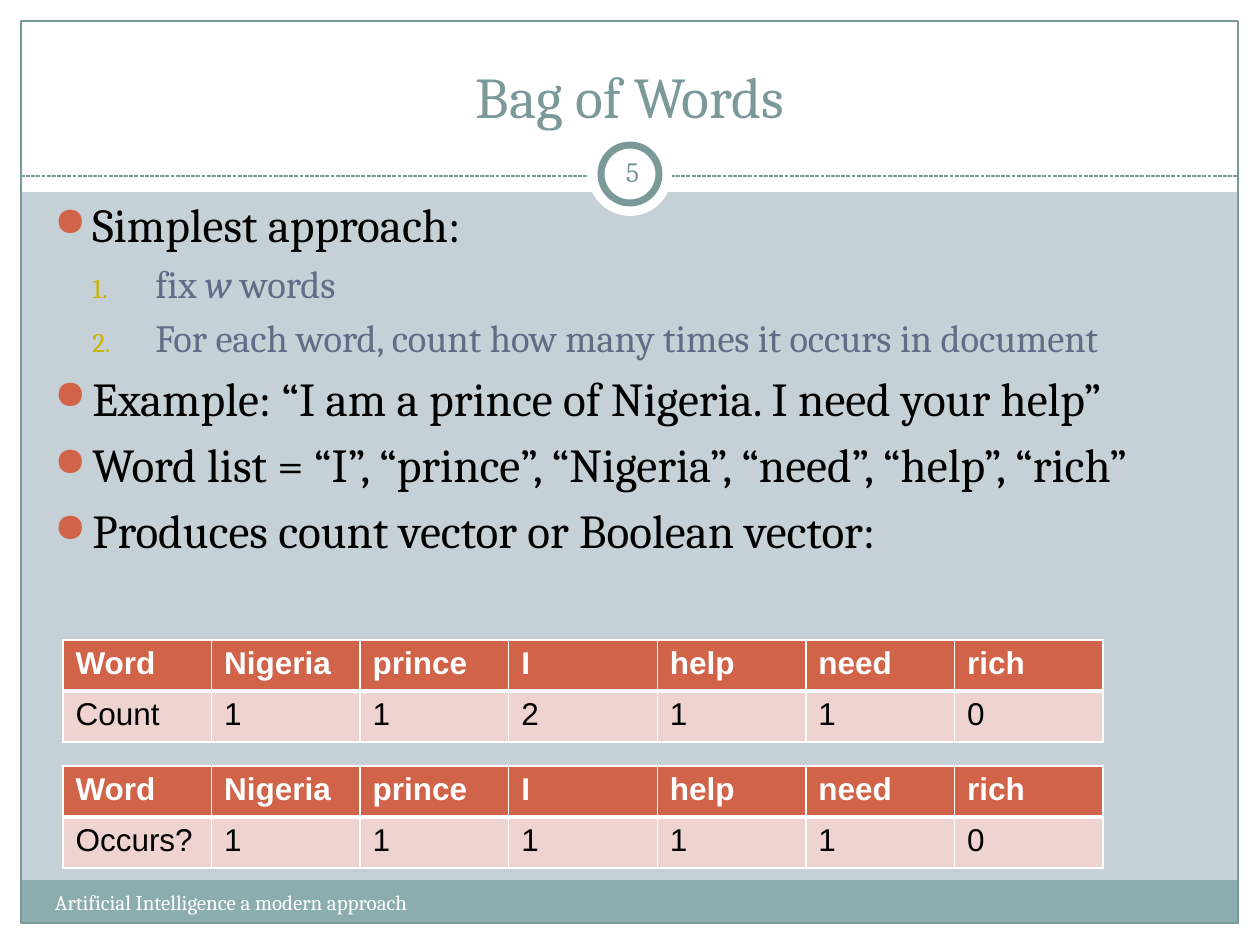
"""Build the Bag of Words slide with its word list and two vector tables."""
from lxml import etree
from pptx import Presentation
from pptx.dml.color import RGBColor
from pptx.enum import dml, shapes, text
from pptx.oxml.ns import qn
from pptx.util import Emu, Pt

PX = 914400 / 126
COLORS = {"white": "FFFFFF", "black": "000000", "back": "C5D1D7", "band": "8CADAE",
          "frame": "7C999A", "number": "7B9899", "accent": "D16349", "gold": "CCB400",
          "slate": "646B86", "pale": "EED3D0"}


def px(*lengths):
    return [Emu(round(length * PX)) for length in lengths]


def style(para, size, color, font="Cambria", bold=False):
    for span in para.runs:
        span.font.size = Pt(size)
        span.font.name = font
        span.font.bold = bold
        span.font.color.rgb = RGBColor.from_string(COLORS[color])


deck = Presentation()
deck.slide_width, deck.slide_height = px(1260, 945)
page = deck.slides.add_slide(deck.slide_layouts[6])
page.background.fill.solid()
page.background.fill.fore_color.rgb = RGBColor.from_string(COLORS["back"])

RECT, OVAL = shapes.MSO_SHAPE.RECTANGLE, shapes.MSO_SHAPE.OVAL
backdrop = [
    (RECT, (0, 924, 1260, 21), "white", 0),
    (RECT, (0, 0, 1260, 192), "white", 0),
    (RECT, (0, 0, 21, 945), "white", 0),
    (RECT, (1239, 0, 21, 945), "white", 0),
    (RECT, (21, 880, 1217, 43), "band", 0),
    (RECT, (21, 21, 1217, 902), None, 0.75),
    (None, (21, 176, 1239, 176), None, 0.75),
    (OVAL, (588, 132, 84, 84), "white", 0),
    (OVAL, (601, 145, 58, 58), "white", 4),
]
for kind, place, fill, width in backdrop:
    if kind is None:
        shape = page.shapes.add_connector(shapes.MSO_CONNECTOR.STRAIGHT, *px(*place))
        shape.line.dash_style = dml.MSO_LINE.SQUARE_DOT
    else:
        shape = page.shapes.add_shape(kind, *px(*place))
        shape.shadow.inherit = False
        if fill:
            shape.fill.solid()
            shape.fill.fore_color.rgb = RGBColor.from_string(COLORS[fill])
        else:
            shape.fill.background()
    if width:
        shape.line.width = Pt(width)
        shape.line.color.rgb = RGBColor.from_string(COLORS["frame"])
    else:
        shape.line.fill.background()
    if kind is None:
        etree.SubElement(shape.element.spPr, qn("a:effectLst"))

LEFT, CENTER = text.PP_ALIGN.LEFT, text.PP_ALIGN.CENTER
TOP, MIDDLE, BOTTOM = text.MSO_ANCHOR.TOP, text.MSO_ANCHOR.MIDDLE, text.MSO_ANCHOR.BOTTOM
labels = [
    ("Bag of Words", (42, 32, 1176, 104), 33, "frame", CENTER, BOTTOM, 13),
    ("Artificial Intelligence a modern approach", (42, 883, 494, 50), 12, "white", LEFT, TOP, 13),
    ("5", (601, 141, 63, 60), 16, "number", CENTER, MIDDLE, 6),
]
for words, place, size, color, align, anchor, inset in labels:
    box = page.shapes.add_textbox(*px(*place))
    frame = box.text_frame
    frame.word_wrap = True
    frame.vertical_anchor = anchor
    frame.margin_left, frame.margin_right = px(inset, inset)
    frame.text = words
    frame.paragraphs[0].alignment = align
    style(frame.paragraphs[0], size, color)

points = [
    (0, ["Simplest approach:"]),
    (1, ["fix ", "w", " words"]),
    (1, ["For each word, count how many times it occurs in document"]),
    (0, ["Example: “I am a prince of Nigeria. I need your help”"]),
    (0, ["Word list = “I”, “prince”, “Nigeria”, “need”, “help”, “rich”"]),
    (0, ["Produces count vector or Boolean vector:"]),
]
levels = [
    (38, -38, 27, "black", "accent", 85, "a:buChar", {"char": "●"}),
    (101, -63, 22, "slate", "gold", 70, "a:buAutoNum", {"type": "arabicPeriod"}),
]
body = page.shapes.add_textbox(*px(42, 189, 1172, 398)).text_frame
body.word_wrap = True
for index, (level, pieces) in enumerate(points):
    margin, indent, size, color, mark_color, mark_size, mark, kind = levels[level]
    para = body.paragraphs[0] if index == 0 else body.add_paragraph()
    para.level = level
    for piece in pieces:
        span = para.add_run()
        span.text = piece
        span.font.italic = piece == "w"
    style(para, size, color)
    props = para._p.get_or_add_pPr()
    for name, length in zip(("marL", "indent"), px(margin, indent)):
        props.set(name, str(length))
    before = etree.SubElement(props, qn("a:spcBef"))
    etree.SubElement(before, qn("a:spcPct"), val="20000")
    tint = etree.SubElement(props, qn("a:buClr"))
    etree.SubElement(tint, qn("a:srgbClr"), val=COLORS[mark_color])
    etree.SubElement(props, qn("a:buSzPct"), val=str(mark_size * 1000))
    etree.SubElement(props, qn(mark), **kind)

header = ["Word", "Nigeria", "prince", "I", "help", "need", "rich"]
vectors = [
    (640, ["Count", "1", "1", "2", "1", "1", "0"]),
    (766, ["Occurs?", "1", "1", "1", "1", "1", "0"]),
]
row_styles = [("accent", "white", True, "lnB"), ("pale", "black", False, "lnT")]
for top, values in vectors:
    table = page.shapes.add_table(2, len(header), *px(63, top, 1040, 102)).table
    table.first_row = table.horz_banding = False
    for row, (words, row_style) in enumerate(zip((header, values), row_styles)):
        fill, color, bold, thick_side = row_style
        for column, word in enumerate(words):
            cell = table.cell(row, column)
            cell.text = word
            style(cell.text_frame.paragraphs[0], 18, color, "Arial", bold)
            props = cell._tc.get_or_add_tcPr()
            for side in ("lnL", "lnR", "lnT", "lnB"):
                width = Pt(3 if side == thick_side else 1)
                border = etree.SubElement(props, qn("a:" + side), w=str(width))
                paint = etree.SubElement(border, qn("a:solidFill"))
                etree.SubElement(paint, qn("a:srgbClr"), val=COLORS["white"])
            cell.fill.solid()
            cell.fill.fore_color.rgb = RGBColor.from_string(COLORS[fill])

deck.save("out.pptx")
